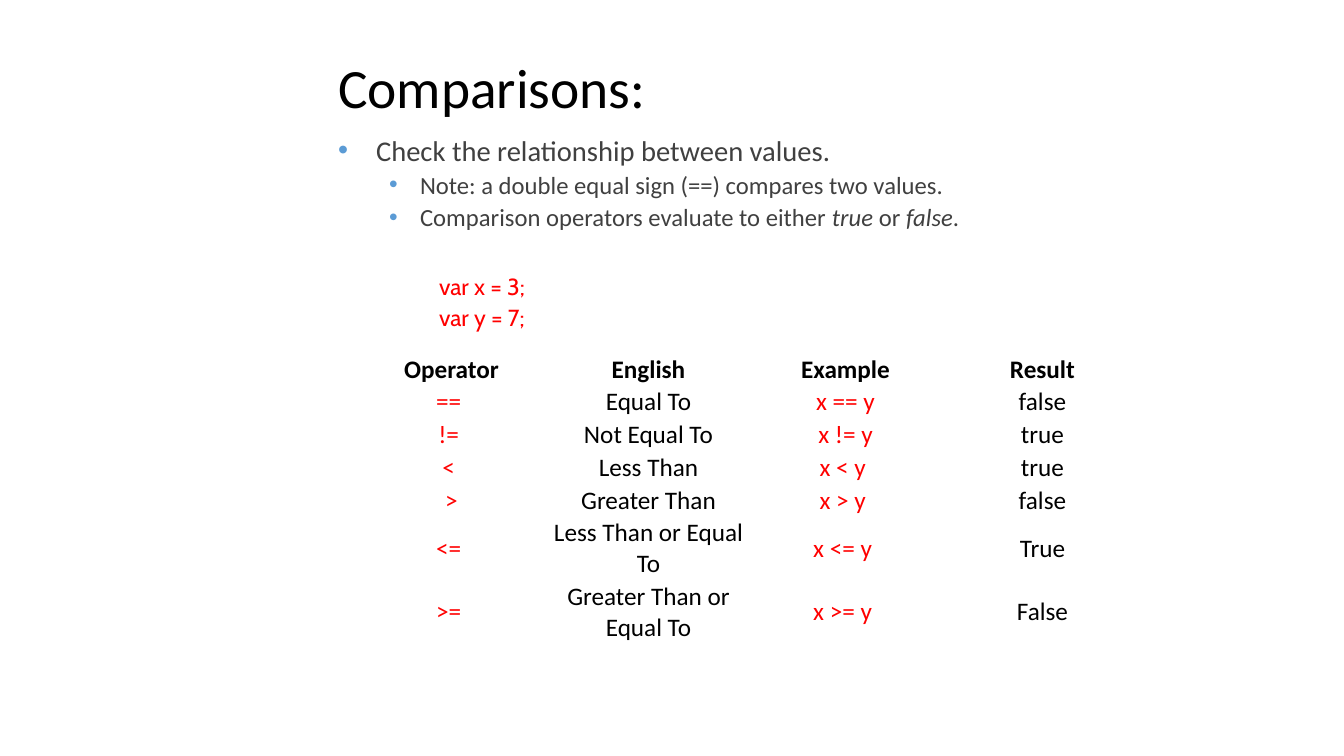
from dataclasses import dataclass

from pptx import Presentation, util as u
from pptx.dml.color import RGBColor
from pptx.enum import text
from pptx.oxml import ns, xmlchemy

EMU_PER_PX = 914400 / 100.8


def px(length):
    return u.Emu(round(length * EMU_PER_PX))


@dataclass(frozen=True)
class Theme:
    font: str = "Calibri"
    code_font: str = "Cabin"
    ink: str = "000000"
    body: str = "404040"
    code: str = "FF0000"
    bullet: str = "5B9BD5"
    title_size: float = 39.6
    lead_size: float = 20.4
    note_size: float = 17.6
    code_size: float = 16.6
    table_size: float = 18


class PageBuilder:
    def __init__(self, page, theme):
        self.page = page
        self.theme = theme

    def place(self, box, left, top, width, height):
        box.left, box.top, box.width, box.height = map(px, (left, top, width, height))
        box.text_frame.auto_size = text.MSO_AUTO_SIZE.NONE
        box.text_frame.word_wrap = True

    def add_span(self, para, words, size, color, font=None, bold=False, italic=False):
        span = para.add_run()
        span.text = words
        span.font.name = font or self.theme.font
        span.font.size = u.Pt(size)
        span.font.color.rgb = RGBColor.from_string(color)
        span.font.bold = bold
        span.font.italic = italic

    def set_bullet(self, para, margin, hanging=0, bulleted=True):
        properties = para._p.get_or_add_pPr()
        properties.set("marL", str(px(margin)))
        properties.set("indent", str(-px(hanging)))

        def add(parent, tag, **attributes):
            child = xmlchemy.OxmlElement(tag)
            for name, value in attributes.items():
                child.set(name, value)
            parent.append(child)
            return child

        if bulleted:
            color = add(properties, "a:buClr")
            add(color, "a:srgbClr", val=self.theme.bullet)
            add(properties, "a:buFont", typeface="Arial")
            add(properties, "a:buChar", char="•")
        else:
            add(properties, "a:buNone")

    def title(self, words, *bounds):
        box = self.page.shapes.title
        self.place(box, *bounds)
        box.text_frame.vertical_anchor = text.MSO_ANCHOR.MIDDLE
        para = box.text_frame.paragraphs[0]
        para.alignment = text.PP_ALIGN.LEFT
        para.line_spacing = 0.9
        self.add_span(para, words, self.theme.title_size, self.theme.ink)

    def body(self, points, code_lines, *bounds):
        theme = self.theme
        box = self.page.placeholders[1]
        self.place(box, *bounds)
        frame = box.text_frame
        frame.vertical_anchor = text.MSO_ANCHOR.TOP
        paras = [frame.paragraphs[0]]
        paras += [frame.add_paragraph() for _ in (points + code_lines)[1:]]
        for para in paras:
            para.line_spacing = 1.1
            para.space_before = para.space_after = u.Pt(0)
        for para, (level, spans) in zip(paras, points):
            para.level = level
            self.set_bullet(para, *((82, 31) if level else (38, 38)))
            size = theme.note_size if level else theme.lead_size
            for words, italic in spans:
                self.add_span(para, words, size, theme.body, italic=italic)
        code_paras = paras[len(points):]
        code_paras[0].space_before = u.Pt(27)
        for para, words in zip(code_paras, code_lines):
            self.set_bullet(para, 101, bulleted=False)
            self.add_span(para, words, theme.code_size, theme.code, theme.code_font)

    def table(self, rows, heights, left, top, column_width):
        theme = self.theme
        columns = len(rows[0])
        table = self.page.shapes.add_table(
            len(rows), columns, px(left), px(top),
            px(column_width * columns), px(sum(heights))).table
        table.first_row = table.horz_banding = False
        for column in table.columns:
            column.width = px(column_width)
        for r, (values, height) in enumerate(zip(rows, heights)):
            table.rows[r].height = px(height)
            for c, words in enumerate(values):
                cell = table.cell(r, c)
                cell.fill.background()
                cell.vertical_anchor = text.MSO_ANCHOR.MIDDLE
                cell.margin_left = cell.margin_right = px(1)
                cell.margin_top = cell.margin_bottom = px(1)
                para = cell.text_frame.paragraphs[0]
                para.alignment = text.PP_ALIGN.CENTER
                color = theme.code if r and c in (0, 2) else theme.ink
                self.add_span(para, words, theme.table_size, color, bold=r == 0)


POINTS = [
    (0, [("Check the relationship between values.", False)]),
    (1, [("Note: a double equal sign (==) compares two values.", False)]),
    (1, [("Comparison operators evaluate to either ", False), ("true", True),
         (" or ", False), ("false", True), (".", False)]),
]
CODE_LINES = ["var x = 3;", "var y = 7;"]
COMPARISONS = [
    ("Operator", "English", "Example", "Result"),
    ("== ", "Equal To", "x == y", "false"),
    ("!= ", "Not Equal To", "x != y", "true"),
    ("< ", "Less Than", "x < y ", "true"),
    (">", "Greater Than", "x > y ", "false"),
    ("<= ", "Less Than or Equal To", "x <= y ", "True"),
    (">= ", "Greater Than or Equal To", "x >= y ", "False"),
]


def main():
    deck = Presentation()
    deck.slide_width, deck.slide_height = px(1344), px(756)
    page = deck.slides.add_slide(deck.slide_layouts[1])
    builder = PageBuilder(page, Theme())
    builder.title("Comparisons:", 328, 58, 727, 66)
    builder.body(POINTS, CODE_LINES, 328, 124, 850, 229)
    builder.table(COMPARISONS, [32] * 5 + [63] * 2, 353, 353, 197)
    deck.save("out.pptx")


if __name__ == "__main__":
    main()
